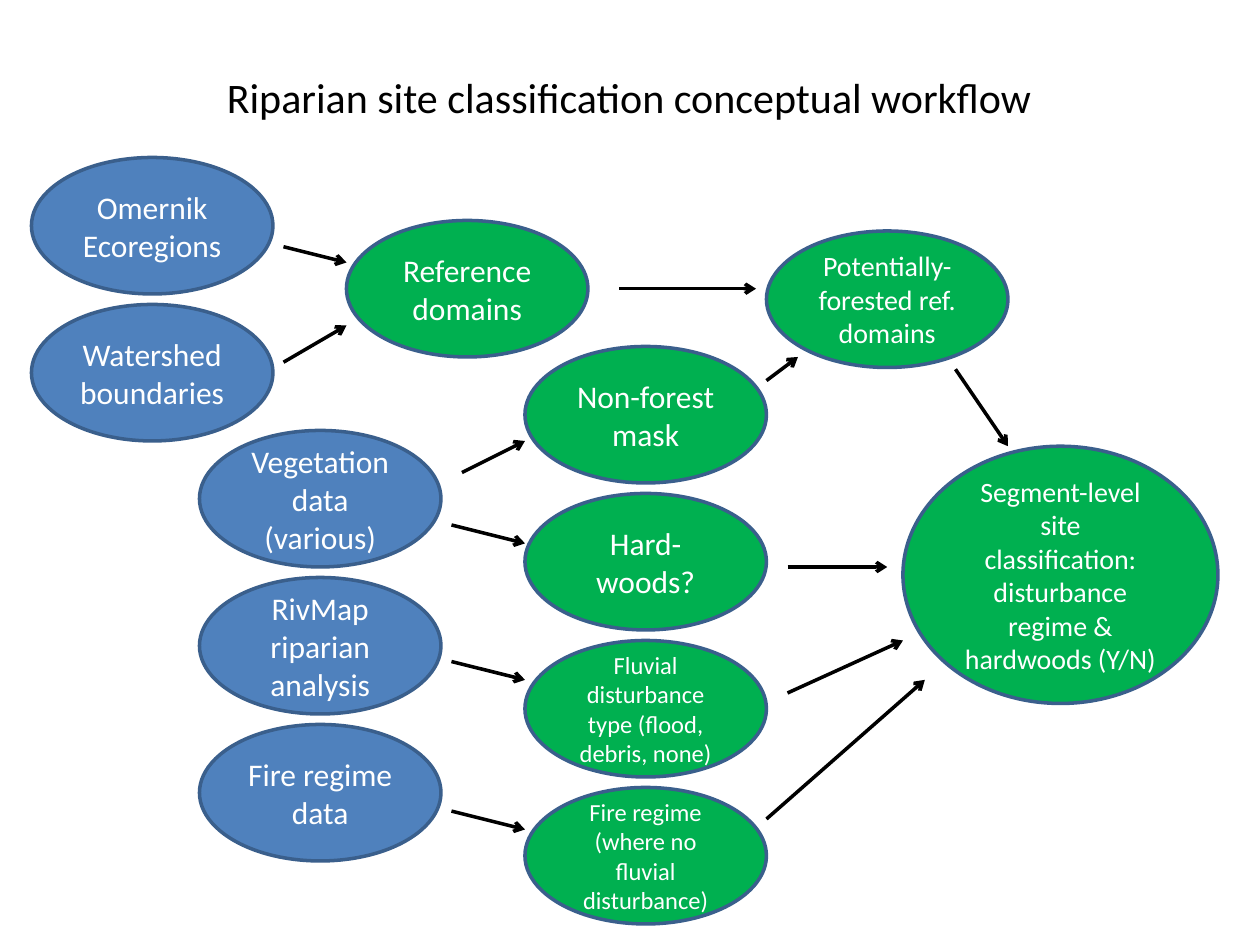
from lxml import etree
from pptx import Presentation
from pptx.dml.color import RGBColor
from pptx.enum.shapes import MSO_CONNECTOR, MSO_SHAPE
from pptx.enum.text import MSO_ANCHOR, PP_ALIGN
from pptx.oxml.ns import qn
from pptx.util import Pt

ELLIPSE = MSO_SHAPE.OVAL
STRAIGHT = MSO_CONNECTOR.STRAIGHT
CENTER = PP_ALIGN.CENTER
MIDDLE = MSO_ANCHOR.MIDDLE

BLUE = RGBColor(0x4F, 0x81, 0xBD)
GREEN = RGBColor(0x00, 0xB0, 0x50)
OUTLINE = RGBColor(0x3A, 0x5F, 0x8C)
BLACK = RGBColor(0x00, 0x00, 0x00)
WHITE = RGBColor(0xFF, 0xFF, 0xFF)

# Node grid: size, row pitch and column positions in points
NODE_WIDTH, NODE_HEIGHT, ROW_PITCH = 138, 78, 84
SOURCE_LEFT, DATA_LEFT, RESULT_LEFT = 18, 114, 300


def write_text(shape, text, size, color):
    frame = shape.text_frame
    frame.text = text
    frame.vertical_anchor = MIDDLE
    paragraph = frame.paragraphs[0]
    paragraph.alignment = CENTER
    font = paragraph.runs[0].font
    for name, value in {"name": "Calibri", "size": Pt(size)}.items():
        setattr(font, name, value)
    font.color.rgb = color


def add_node(text, left, top, fill, size=18, width=NODE_WIDTH, height=NODE_HEIGHT):
    shape = slide.shapes.add_shape(ELLIPSE, Pt(left), Pt(top), Pt(width), Pt(height))
    shape.shadow.inherit = False
    shape.fill.solid()
    shape.fill.fore_color.rgb = fill
    shape.line.color.rgb = OUTLINE
    shape.line.width = Pt(2)
    shape.text_frame.word_wrap = True
    write_text(shape, text, size, WHITE)


presentation = Presentation()
presentation.slide_width = Pt(720)
presentation.slide_height = Pt(540)
slide = presentation.slides.add_slide(presentation.slide_layouts[5])

# Title
title = slide.shapes.title
title_box = {"left": 120, "top": 37, "width": 479, "height": 36}
for name, value in title_box.items():
    setattr(title, name, Pt(value))
title.text_frame.word_wrap = False
write_text(title, "Riparian site classification conceptual workflow", 24, BLACK)

# Columns of nodes: left, first top, fill, (text, size) from top to bottom
columns = [
    (SOURCE_LEFT, 90, BLUE, [("Omernik Ecoregions", 18), ("Watershed boundaries", 18)]),
    (DATA_LEFT, 246, BLUE, [
        ("Vegetation data (various)", 18),
        ("RivMap riparian analysis", 18),
        ("Fire regime data", 18),
    ]),
    (RESULT_LEFT, 198, GREEN, [
        ("Non-forest mask", 18),
        ("Hard-woods?", 18),
        ("Fluvial disturbance type (flood, debris, none)", 14),
        ("Fire regime (where no fluvial disturbance)", 14),
    ]),
]
for left, first_top, fill, nodes in columns:
    for row, (text, size) in enumerate(nodes):
        add_node(text, left, first_top + row * ROW_PITCH, fill, size)

# Single nodes
add_node("Reference domains", 198, 126, GREEN)
add_node("Potentially-forested ref. domains", 438, 132, GREEN, 16)
add_node(
    "Segment-level site classification: disturbance regime & hardwoods (Y/N)",
    516, 255, GREEN, 16, width=180, height=147,
)

# Arrows: start x, start y, end x, end y
arrows = [
    (162, 141, 198, 150),
    (162, 207, 198, 186),
    (264, 270, 300, 252),
    (258, 300, 300, 310.5),
    (258, 378, 300, 388.5),
    (258, 463.5, 300, 474),
    (354, 165, 432, 165),
    (438, 217.5, 456, 204),
    (546, 211, 576, 255),
    (450, 324, 507, 324),
    (450, 396, 516, 366),
    (438, 468, 528.5, 388.5),
]
for points in arrows:
    arrow = slide.shapes.add_connector(STRAIGHT, *[Pt(value) for value in points])
    arrow.line.color.rgb = BLACK
    arrow.line.width = Pt(2)
    line = arrow.line._get_or_add_ln()
    etree.SubElement(line, qn("a:tailEnd"), type="arrow")
    etree.SubElement(arrow._element.spPr, qn("a:effectLst"))

presentation.save("out.pptx")
